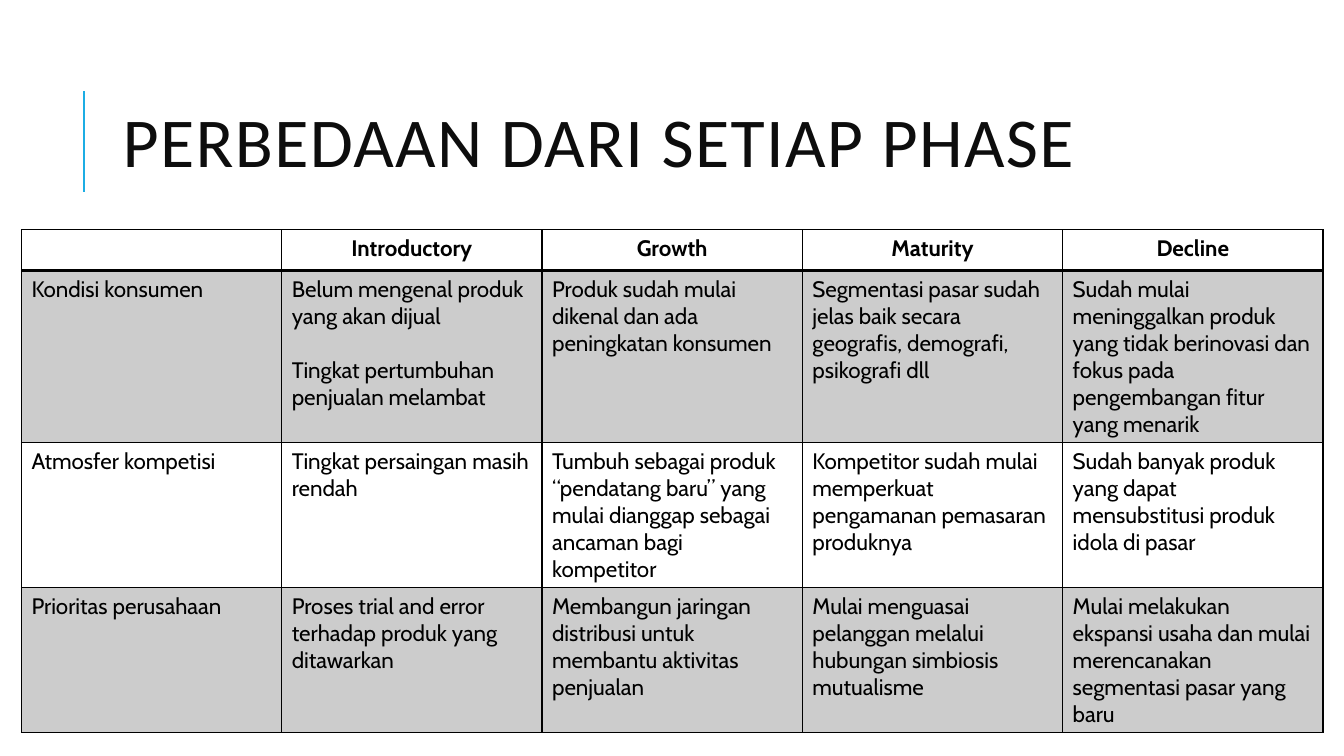
from dataclasses import dataclass

from lxml import etree
from pptx import Presentation
from pptx.dml.color import RGBColor
from pptx.enum.shapes import MSO_CONNECTOR
from pptx.enum.text import MSO_ANCHOR, PP_ALIGN
from pptx.oxml.ns import qn
from pptx.util import Cm, Pt

STRAIGHT = MSO_CONNECTOR.STRAIGHT
MIDDLE = MSO_ANCHOR.MIDDLE
CENTER = PP_ALIGN.CENTER
LEFT = PP_ALIGN.LEFT


@dataclass(frozen=True)
class Theme:
    """Colours, fonts and type sizes of the slide."""
    accent: str = "1CADE4"
    title_color: str = "0D0D0D"
    ink: str = "000000"
    band_opacity: int = 20
    title_font: str = "Calibri"
    table_font: str = "Cabin"
    title_size: int = 50
    table_size: int = 16
    rule: float = 1
    header_rule: float = 2
    accent_rule: float = 1.5
    paragraph_gap: float = 19.4


THEME = Theme()
COLUMN_WIDTH = Cm(6.56)
ROW_HEIGHTS = [Cm(1.03), Cm(4.34), Cm(3.65), Cm(3.65)]
PHASE_ROWS = [
    ["", "Introductory", "Growth", "Maturity", "Decline"],
    ["Kondisi konsumen",
     "Belum mengenal produk yang akan dijual\nTingkat pertumbuhan penjualan melambat",
     "Produk sudah mulai dikenal dan ada peningkatan konsumen",
     "Segmentasi pasar sudah jelas baik secara geografis, demografi, psikografi dll",
     "Sudah mulai meninggalkan produk yang tidak berinovasi dan fokus pada "
     "pengembangan fitur yang menarik"],
    ["Atmosfer kompetisi",
     "Tingkat persaingan masih rendah",
     "Tumbuh sebagai produk “pendatang baru” yang mulai dianggap sebagai ancaman "
     "bagi kompetitor",
     "Kompetitor sudah mulai memperkuat pengamanan pemasaran produknya",
     "Sudah banyak produk yang dapat mensubstitusi produk idola di pasar"],
    ["Prioritas perusahaan",
     "Proses trial and error terhadap produk yang ditawarkan",
     "Membangun jaringan distribusi untuk membantu aktivitas penjualan",
     "Mulai menguasai pelanggan melalui hubungan simbiosis mutualisme",
     "Mulai melakukan ekspansi usaha dan mulai merencanakan segmentasi pasar yang baru"],
]


def style_font(font, name, size, color, bold=False):
    """Set the typeface, size, colour and weight of a font."""
    font.name = name
    font.size = Pt(size)
    font.bold = bold
    font.color.rgb = RGBColor.from_string(color)


def add_accent_line(page):
    """Draw the vertical rule beside the title."""
    line = page.shapes.add_connector(STRAIGHT, Cm(2.12), Cm(4.83), Cm(2.12), Cm(2.29))
    line.line.color.rgb = RGBColor.from_string(THEME.accent)
    line.line.width = Pt(THEME.accent_rule)
    etree.SubElement(line._element.spPr, qn("a:effectLst"))


def add_title(page, text):
    """Add the letter-spaced slide title."""
    box = page.shapes.add_textbox(Cm(2.84), Cm(1.63), Cm(27), Cm(4.17))
    frame = box.text_frame
    frame.word_wrap = True
    frame.vertical_anchor = MIDDLE
    frame.text = text
    para = frame.paragraphs[0]
    para.line_spacing = 0.8
    span = para.runs[0]
    style_font(span.font, THEME.title_font, THEME.title_size, THEME.title_color)
    span.font._element.set("spc", "100")


def set_borders(cell, top, bottom):
    """Outline a cell with the given top and bottom rule weights."""
    properties = cell._tc.get_or_add_tcPr()
    weights = {"a:lnL": THEME.rule, "a:lnR": THEME.rule, "a:lnT": top, "a:lnB": bottom}
    for position, (tag, weight) in enumerate(weights.items()):
        border = etree.Element(qn(tag), w=str(Pt(weight)))
        fill = etree.SubElement(border, qn("a:solidFill"))
        etree.SubElement(fill, qn("a:srgbClr"), val=THEME.ink)
        properties.insert(position, border)


def fill_cell(cell, banded):
    """Give a cell a translucent band or no fill."""
    if not banded:
        cell.fill.background()
        return
    cell.fill.solid()
    cell.fill.fore_color.rgb = RGBColor.from_string(THEME.ink)
    color = cell._tc.tcPr.find(qn("a:solidFill")).find(qn("a:srgbClr"))
    etree.SubElement(color, qn("a:alpha"), val=str(THEME.band_opacity * 1000))


def write_cell(cell, text, is_header):
    """Write and format the paragraphs of a cell."""
    cell.text_frame.text = text
    for index, para in enumerate(cell.text_frame.paragraphs):
        para.alignment = CENTER if is_header else LEFT
        if index:
            para.space_before = Pt(THEME.paragraph_gap)
        style_font(para.font, THEME.table_font, THEME.table_size, THEME.ink, is_header)
        for span in para.runs:
            style_font(span.font, THEME.table_font, THEME.table_size, THEME.ink, is_header)


def add_phase_table(page, rows):
    """Add the banded comparison of the phases."""
    columns = len(rows[0])
    table = page.shapes.add_table(len(rows), columns, Cm(0.54), Cm(5.79),
                                  COLUMN_WIDTH * columns, sum(ROW_HEIGHTS)).table
    table.horz_banding = False
    for column in table.columns:
        column.width = COLUMN_WIDTH
    for row_index, texts in enumerate(rows):
        table.rows[row_index].height = ROW_HEIGHTS[row_index]
        top = THEME.header_rule if row_index == 1 else THEME.rule
        bottom = THEME.header_rule if row_index == 0 else THEME.rule
        for column_index, text in enumerate(texts):
            cell = table.cell(row_index, column_index)
            write_cell(cell, text, row_index == 0)
            set_borders(cell, top, bottom)
            fill_cell(cell, row_index % 2 == 1)


def main():
    """Build and save the slide."""
    deck = Presentation()
    deck.slide_width, deck.slide_height = Cm(33.87), Cm(19.05)
    page = deck.slides.add_slide(deck.slide_layouts[6])
    add_accent_line(page)
    add_title(page, "PERBEDAAN DARI SETIAP PHASE")
    add_phase_table(page, PHASE_ROWS)
    deck.save("out.pptx")


if __name__ == "__main__":
    main()
